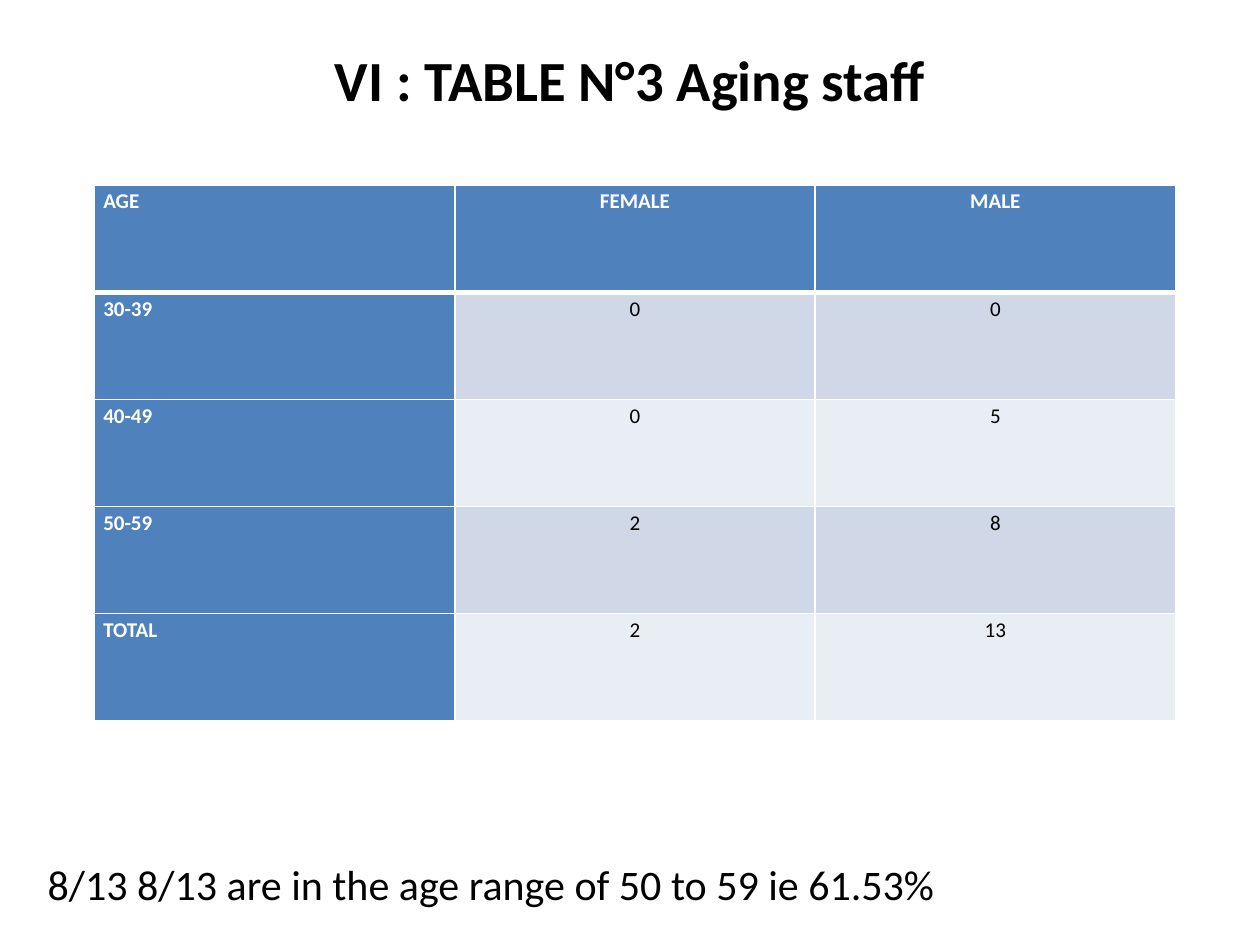
from dataclasses import dataclass

from lxml.etree import SubElement
from pptx import Presentation
from pptx.dml.color import RGBColor
from pptx.enum.text import MSO_ANCHOR, PP_ALIGN
from pptx.oxml.ns import qn
from pptx.util import Inches, Pt

FONT = "Calibri"
COLORS = {
    "text": "000000",
    "white": "FFFFFF",
    "header": "4F81BD",
    "band_dark": "D0D8E8",
    "band_light": "E9EDF4",
}
ROWS = [
    ("AGE", "FEMALE", "MALE"),
    ("30-39", "0", "0"),
    ("40-49", "0", "5"),
    ("50-59", "2", "8"),
    ("TOTAL", "2", "13"),
]
COL_WIDTH, ROW_HEIGHT = 2.86, 0.85


@dataclass
class TextBlock:
    text: str
    left: float
    top: float
    width: float
    height: float
    size: float
    bottom_inset: float
    anchor: MSO_ANCHOR
    align: PP_ALIGN = PP_ALIGN.LEFT
    bold: bool = False


BLOCKS = [
    TextBlock("VI\u00a0: TABLE N°3 Aging staff", 0.5, 0.3, 9, 1.25, 32.4, 0.65,
              MSO_ANCHOR.MIDDLE, PP_ALIGN.CENTER, True),
    TextBlock("8/13 8/13 are in the age range of 50 to 59 ie 61.53%",
              0.28, 1.15, 9.45, 6.06, 24, 0, MSO_ANCHOR.BOTTOM),
]


def rgb(name: str) -> RGBColor:
    return RGBColor.from_string(COLORS[name])


def style_paragraph(p, size: float, color: str, bold: bool, align: PP_ALIGN) -> None:
    p.alignment = align
    p.font.name = FONT
    p.font.size = Pt(size)
    p.font.bold = bold
    p.font.color.rgb = rgb(color)


def add_text(slide, block: TextBlock) -> None:
    box = slide.shapes.add_textbox(Inches(block.left), Inches(block.top),
                                   Inches(block.width), Inches(block.height))
    tf = box.text_frame
    tf.word_wrap = True
    tf.vertical_anchor = block.anchor
    tf.margin_bottom = Inches(block.bottom_inset)
    p = tf.paragraphs[0]
    p.text = block.text
    style_paragraph(p, block.size, "text", block.bold, block.align)


def set_borders(cell, widths: dict[str, float]) -> None:
    """Draw white cell borders; call before the fill, which must follow them."""
    tc_pr = cell._tc.get_or_add_tcPr()
    for side, width in widths.items():
        ln = SubElement(tc_pr, qn(f"a:ln{side}"), w=str(Pt(width)))
        fill = SubElement(ln, qn("a:solidFill"))
        SubElement(fill, qn("a:srgbClr"), val=COLORS["white"])


def fill_cell(cell, text: str, row: int, col: int) -> None:
    is_header = row == 0 or col == 0
    band = "band_dark" if row % 2 else "band_light"
    set_borders(cell, {"L": 1, "R": 1, "T": 3 if row == 1 else 1,
                       "B": 3 if row == 0 else 1})
    cell.fill.solid()
    cell.fill.fore_color.rgb = rgb("header" if is_header else band)
    cell.margin_left = cell.margin_right = Inches(0.07)
    cell.margin_top = cell.margin_bottom = 0
    p = cell.text_frame.paragraphs[0]
    p.text = text
    p.line_spacing = 1.15
    style_paragraph(p, 12, "white" if is_header else "text", is_header,
                    PP_ALIGN.CENTER if col else PP_ALIGN.LEFT)


def add_age_table(slide) -> None:
    n_rows, n_cols = len(ROWS), len(ROWS[0])
    table = slide.shapes.add_table(
        n_rows, n_cols, Inches(0.75), Inches(1.47),
        Inches(COL_WIDTH * n_cols), Inches(ROW_HEIGHT * n_rows)).table
    for column in table.columns:
        column.width = Inches(COL_WIDTH)
    for i, values in enumerate(ROWS):
        table.rows[i].height = Inches(ROW_HEIGHT)
        for j, text in enumerate(values):
            fill_cell(table.cell(i, j), text, i, j)


def main() -> None:
    prs = Presentation()
    prs.slide_width, prs.slide_height = Inches(10), Inches(7.5)
    slide = prs.slides.add_slide(prs.slide_layouts[6])
    for block in BLOCKS:
        add_text(slide, block)
    add_age_table(slide)
    prs.save("out.pptx")


if __name__ == "__main__":
    main()
